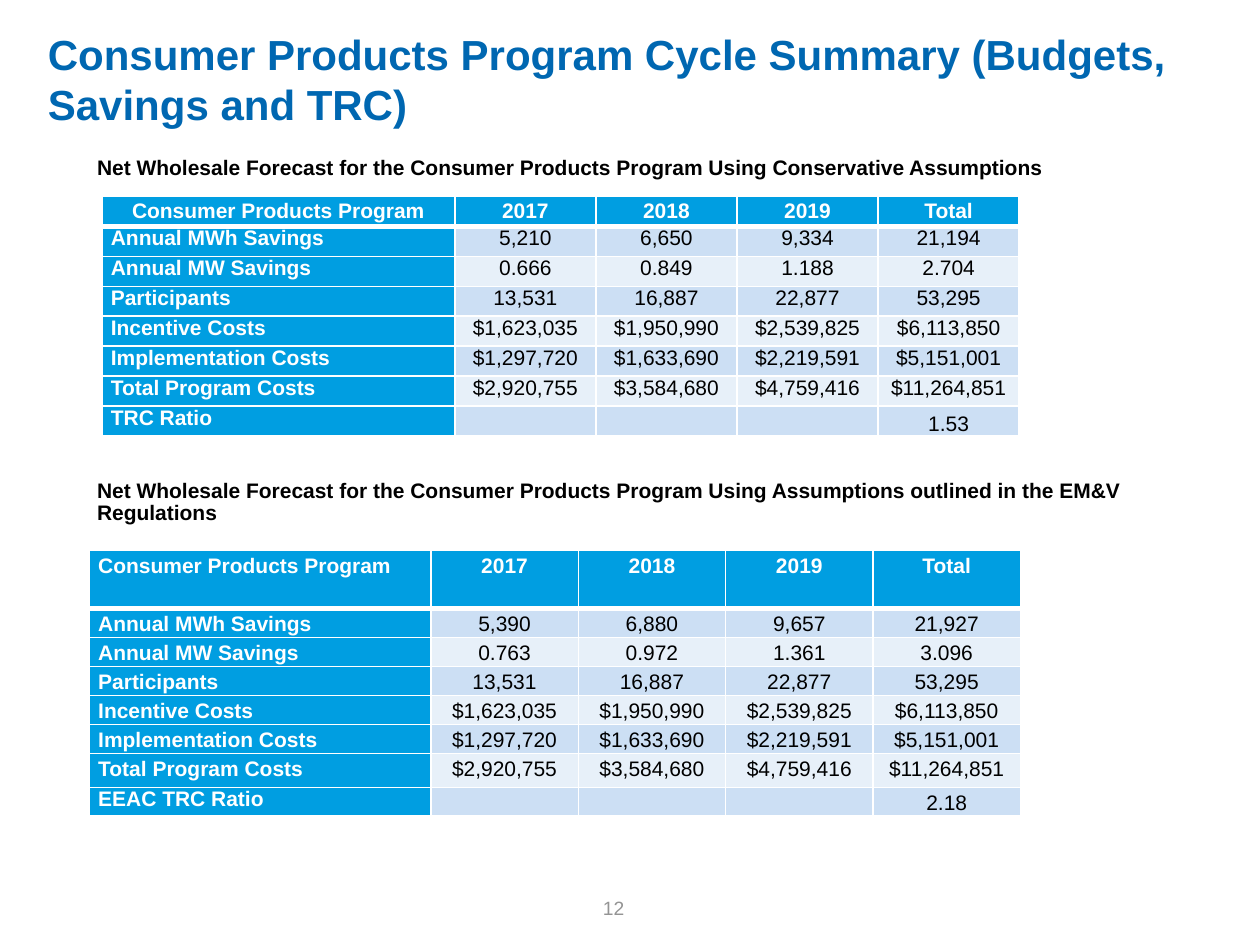
from lxml.etree import SubElement
from pptx import Presentation
from pptx.dml.color import RGBColor
from pptx.enum.text import MSO_ANCHOR as Anchor, PP_ALIGN as Align
from pptx.oxml.ns import qn
from pptx.util import Inches, Pt

TITLE = "Consumer Products Program Cycle Summary (Budgets, Savings and TRC)"
PAGE_NUMBER = "12"
CAPTIONS = [  # text, top, height, bold
    ("Net Wholesale Forecast for the Consumer Products Program "
     "Using Conservative Assumptions", 1.25, 0.2, True),
    ("Net Wholesale Forecast for the Consumer Products Program "
     "Using Assumptions outlined in the EM&V Regulations", 3.81, 0.4, True),
    (".", 6.34, 0.2, False),
]
HEADER = ["Consumer Products Program", "2017", "2018", "2019", "Total"]
SHARED_ROWS = [
    ["Participants", "13,531", "16,887", "22,877", "53,295"],
    ["Incentive Costs", "$1,623,035", "$1,950,990", "$2,539,825", "$6,113,850"],
    ["Implementation Costs", "$1,297,720", "$1,633,690", "$2,219,591", "$5,151,001"],
    ["Total Program Costs", "$2,920,755", "$3,584,680", "$4,759,416", "$11,264,851"],
]
REGULATION_ROWS = [
    HEADER,
    ["Annual MWh Savings", "5,390", "6,880", "9,657", "21,927"],
    ["Annual MW Savings", "0.763", "0.972", "1.361", "3.096"],
    *SHARED_ROWS,
    ["EEAC TRC Ratio", "", "", "", "2.18"],
]
CONSERVATIVE_ROWS = [
    HEADER,
    ["Annual MWh Savings", "5,210", "6,650", "9,334", "21,194"],
    ["Annual MW Savings", "0.666", "0.849", "1.188", "2.704"],
    *SHARED_ROWS,
    ["TRC Ratio", "", "", "", "1.53"],
]
FORECASTS = [
    dict(rows=REGULATION_ROWS, left=0.71, top=4.37, label_width=2.71, value_width=1.17,
         heights=[0.46] + [0.22] * 5 + [0.27, 0.22], spacing=1.15,
         header_align=Align.LEFT, header_anchor=Anchor.TOP),
    dict(rows=CONSERVATIVE_ROWS, left=0.81, top=1.56, label_width=2.8, value_width=1.12,
         heights=[1.9 / 8] * 8, spacing=1.0,
         header_align=Align.CENTER, header_anchor=Anchor.MIDDLE),
]
BLUE, WHITE, BLACK = "009EE1", "FFFFFF", "000000"
BANDS = ["E7F0F9", "CCDFF4"]


def style(paragraph, size, color, bold=False, align=Align.LEFT, spacing=1.0):
    paragraph.alignment = align
    paragraph.line_spacing = spacing
    for run in paragraph.runs:
        run.font.name = "Arial"
        run.font.size = Pt(size)
        run.font.bold = bold
        run.font.color.rgb = RGBColor.from_string(color)


def clear_margins(frame):
    frame.margin_left = frame.margin_right = frame.margin_top = frame.margin_bottom = 0
    frame.word_wrap = True


def place(shape, left, top, width, height):
    shape.left, shape.top = Inches(left), Inches(top)
    shape.width, shape.height = Inches(width), Inches(height)


def add_label(slide, text, box):
    label = slide.shapes.add_textbox(*map(Inches, box))
    clear_margins(label.text_frame)
    label.text_frame.text = text
    return label.text_frame


def add_borders(cell, row):
    """White rules, with a heavier one between the header and the body."""
    weights = {"a:lnL": 1, "a:lnR": 1, "a:lnT": 3 if row == 1 else 1,
               "a:lnB": 3 if row == 0 else 1}
    for side, weight in weights.items():
        line = SubElement(cell._tc.get_or_add_tcPr(), qn(side), w=str(Pt(weight)))
        SubElement(SubElement(line, qn("a:solidFill")), qn("a:srgbClr"), val=WHITE)


def add_forecast(slide, forecast):
    rows, heights = forecast["rows"], forecast["heights"]
    widths = [forecast["label_width"]] + [forecast["value_width"]] * 4
    box = forecast["left"], forecast["top"], sum(widths), sum(heights)
    table = slide.shapes.add_table(len(rows), len(widths), *map(Inches, box)).table
    for column, width in zip(table.columns, widths):
        column.width = Inches(width)
    for table_row, height in zip(table.rows, heights):
        table_row.height = Inches(height)

    last = len(rows) - 1
    for r, values in enumerate(rows):
        for c, value in enumerate(values):
            cell = table.cell(r, c)
            heading = r == 0 or c == 0
            add_borders(cell, r)
            cell.fill.solid()
            cell.fill.fore_color.rgb = RGBColor.from_string(BLUE if heading else BANDS[r % 2])
            cell.margin_left = cell.margin_right = Inches(0.07)
            cell.margin_top = cell.margin_bottom = 0
            cell.vertical_anchor = Anchor.TOP
            if r == 0:
                cell.vertical_anchor = forecast["header_anchor"]
            elif r == last and c > 0:
                cell.vertical_anchor = Anchor.BOTTOM

            align = Align.LEFT if c == 0 else Align.CENTER
            if r == 0 and c == 0:
                align = forecast["header_align"]
            paragraph = cell.text_frame.paragraphs[0]
            if value:
                paragraph.text = value
                style(paragraph, 12, WHITE if heading else BLACK, heading, align,
                      1.0 if r == last else forecast["spacing"])
            else:
                paragraph._p.get_or_add_endParaRPr().set("sz", "1200")


def main():
    deck = Presentation()
    deck.slide_width, deck.slide_height = Inches(10), Inches(7.5)
    slide = deck.slides.add_slide(deck.slide_layouts[5])

    title = slide.shapes.title
    place(title, 0.38, 0, 9, 1.25)
    clear_margins(title.text_frame)
    title.text_frame.vertical_anchor = Anchor.MIDDLE
    title.text_frame.text = TITLE
    style(title.text_frame.paragraphs[0], 24, "0067B1", bold=True)

    for text, top, height, bold in CAPTIONS:
        caption = add_label(slide, text, (0.77, top, 8.88, height))
        style(caption.paragraphs[0], 12, BLACK, bold, spacing=0.9)

    for forecast in FORECASTS:
        add_forecast(slide, forecast)

    page = add_label(slide, PAGE_NUMBER, (4.68, 7.11, 0.38, 0.19))
    page.vertical_anchor = Anchor.MIDDLE
    style(page.paragraphs[0], 11, "949494", align=Align.CENTER)

    deck.save("out.pptx")


if __name__ == "__main__":
    main()
